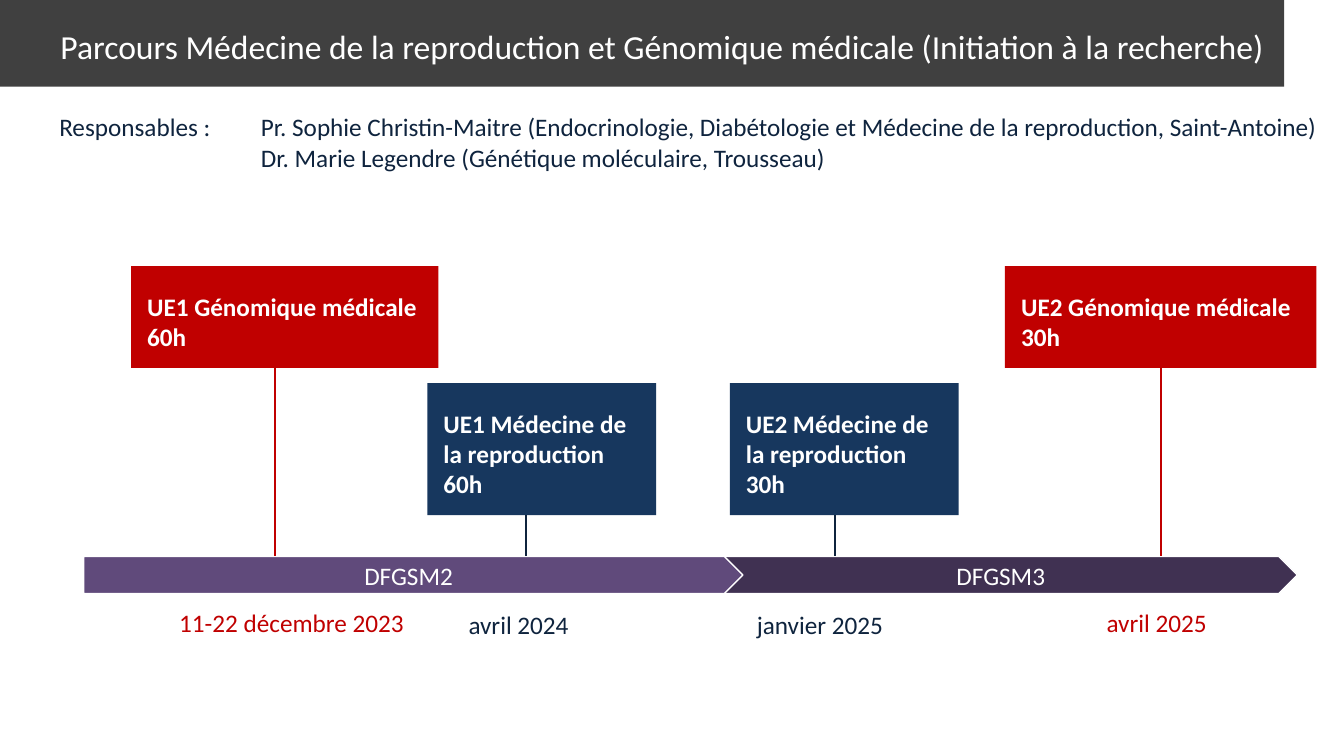
from dataclasses import dataclass

from pptx import Presentation
from pptx.dml.color import RGBColor
from pptx.enum.shapes import MSO_CONNECTOR as Connector, MSO_SHAPE as Preset
from pptx.enum.text import MSO_ANCHOR as Anchor, MSO_AUTO_SIZE as AutoSize, PP_ALIGN as Align
from pptx.oxml.ns import qn
from pptx.util import Inches, Pt
from lxml.etree import SubElement

COLUMNS, ROWS = 80, 45
CELL = Inches(1) / 6


@dataclass(frozen=True)
class Theme:
    font: str = "Calibri"
    title_size: int = 24
    body_size: int = 18
    white: str = "FFFFFF"
    banner: str = "404040"
    ink: str = "0F243E"
    genomics: str = "C00000"
    reproduction: str = "17375E"
    second_year: str = "604A7B"
    third_year: str = "403152"


def cells(*counts):
    """Turn grid counts into lengths."""
    return [round(count * CELL) for count in counts]


class TimelineSlide:
    def __init__(self, deck, theme):
        self.theme = theme
        self.slide = deck.slides.add_slide(deck.slide_layouts[5])
        self.shapes = self.slide.shapes

    def add_text(self, paragraph, text, color, size=None, bold=False):
        run = paragraph.add_run()
        run.text = text
        run.font.name = self.theme.font
        run.font.size = Pt(size or self.theme.body_size)
        run.font.bold = bold
        run.font.color.rgb = RGBColor.from_string(color)

    def fill(self, shape, color):
        shape.fill.solid()
        shape.fill.fore_color.rgb = RGBColor.from_string(color)

    def title(self, text, *box):
        banner = self.shapes.title
        banner.left, banner.top, banner.width, banner.height = cells(*box)
        self.fill(banner, self.theme.banner)
        frame = banner.text_frame
        frame.auto_size = AutoSize.NONE
        frame.vertical_anchor = Anchor.BOTTOM
        frame.margin_left = frame.margin_right = frame.margin_bottom = Inches(0.2)
        paragraph = frame.paragraphs[0]
        paragraph.alignment = Align.RIGHT
        self.add_text(paragraph, text, self.theme.white, self.theme.title_size)

    def block(self, preset, color, *box):
        block = self.shapes.add_shape(preset, *cells(*box))
        block.shadow.inherit = False
        self.fill(block, color)
        block.line.fill.background()
        return block

    def course(self, lines, color, *box):
        frame = self.block(Preset.RECTANGLE, color, *box).text_frame
        frame.word_wrap = True
        frame.vertical_anchor = Anchor.TOP
        frame.margin_left = frame.margin_right = frame.margin_bottom = Inches(0.16)
        frame.margin_top = Inches(0.25)
        for index, line in enumerate(lines):
            paragraph = frame.add_paragraph() if index else frame.paragraphs[0]
            paragraph.alignment = Align.LEFT
            self.add_text(paragraph, line, self.theme.white, bold=True)

    def year(self, name, color, *box):
        arrow = self.block(Preset.PENTAGON, color, *box)
        arrow.line.color.rgb = RGBColor.from_string(self.theme.white)
        arrow.line.width = Pt(1)
        frame = arrow.text_frame
        frame.vertical_anchor = Anchor.MIDDLE
        frame.paragraphs[0].alignment = Align.CENTER
        self.add_text(frame.paragraphs[0], name, self.theme.white)

    def stem(self, color, x, top, bottom):
        stem = self.shapes.add_connector(Connector.STRAIGHT, *cells(x, top, x, bottom))
        stem.line.color.rgb = RGBColor.from_string(color)
        stem.line.width = Pt(1.5)
        SubElement(stem._element.spPr, qn("a:effectLst"))

    def text_box(self, *box):
        frame = self.shapes.add_textbox(*cells(*box)).text_frame
        frame.word_wrap = True
        return frame

    def date(self, text, color, *box):
        self.add_text(self.text_box(*box).paragraphs[0], text, color)

    def leaders(self, label, names, *box):
        """List the names in a column two inches right of the label."""
        frame = self.text_box(*box)
        for index, name in enumerate(names):
            paragraph = frame.add_paragraph() if index else frame.paragraphs[0]
            properties = paragraph._p.get_or_add_pPr()
            properties.set("marL", str(Inches(2)))
            properties.set("indent", str(0 if index else -Inches(2)))
            text = name if index else f"{label}\t{name}"
            self.add_text(paragraph, text, self.theme.ink)


def main():
    deck = Presentation()
    deck.slide_width, deck.slide_height = cells(COLUMNS, ROWS)
    theme = Theme()
    timeline = TimelineSlide(deck, theme)

    timeline.title(
        "Parcours Médecine de la reproduction et Génomique médicale (Initiation à la recherche)",
        -3.72, -1.2, 80.16, 6.36)
    timeline.leaders("Responsables :", [
        "Pr. Sophie Christin-Maitre (Endocrinologie, Diabétologie et Médecine de la reproduction, Saint-Antoine)",
        "Dr. Marie Legendre (Génétique moléculaire, Trousseau)",
    ], 2.94, 6.36, 76.56, 6.06)

    years_top, years_height = 33.12, 2.22
    timeline.year("DFGSM3", theme.third_year, 42.48, years_top, 34.74, years_height)
    timeline.year("DFGSM2", theme.second_year, 4.98, years_top, 39.24, years_height)

    # Per subject: box colour, stem and date colour, box top and height, date top
    genomics = (theme.genomics, theme.genomics, 15.84, 6.06, 35.88)
    reproduction = (theme.reproduction, theme.ink, 22.8, 7.86, 36)
    # Per course: subject, lines, box left and width, stem x, date, date left
    courses = [
        (genomics, ["UE1 Génomique médicale", "60h"], 7.8, 18.3, 16.38, "11-22 décembre 2023", 10.08),
        (genomics, ["UE2 Génomique médicale", "30h"], 59.82, 18.54, 69.12, "avril 2025", 65.28),
        (reproduction, ["UE1 Médecine de la reproduction", "60h"], 25.44, 13.62, 31.32, "avril 2024", 27.3),
        (reproduction, ["UE2 Médecine de la reproduction", "30h"], 43.44, 13.62, 49.68, "janvier 2025", 44.46),
    ]
    for subject, lines, left, width, stem_x, date, date_left in courses:
        box_color, accent, top, height, date_top = subject
        timeline.course(lines, box_color, left, top, width, height)
        timeline.stem(accent, stem_x, top + height, years_top)
        timeline.date(date, accent, date_left, date_top, 15.36, 2.4)

    deck.save("out.pptx")


if __name__ == "__main__":
    main()
